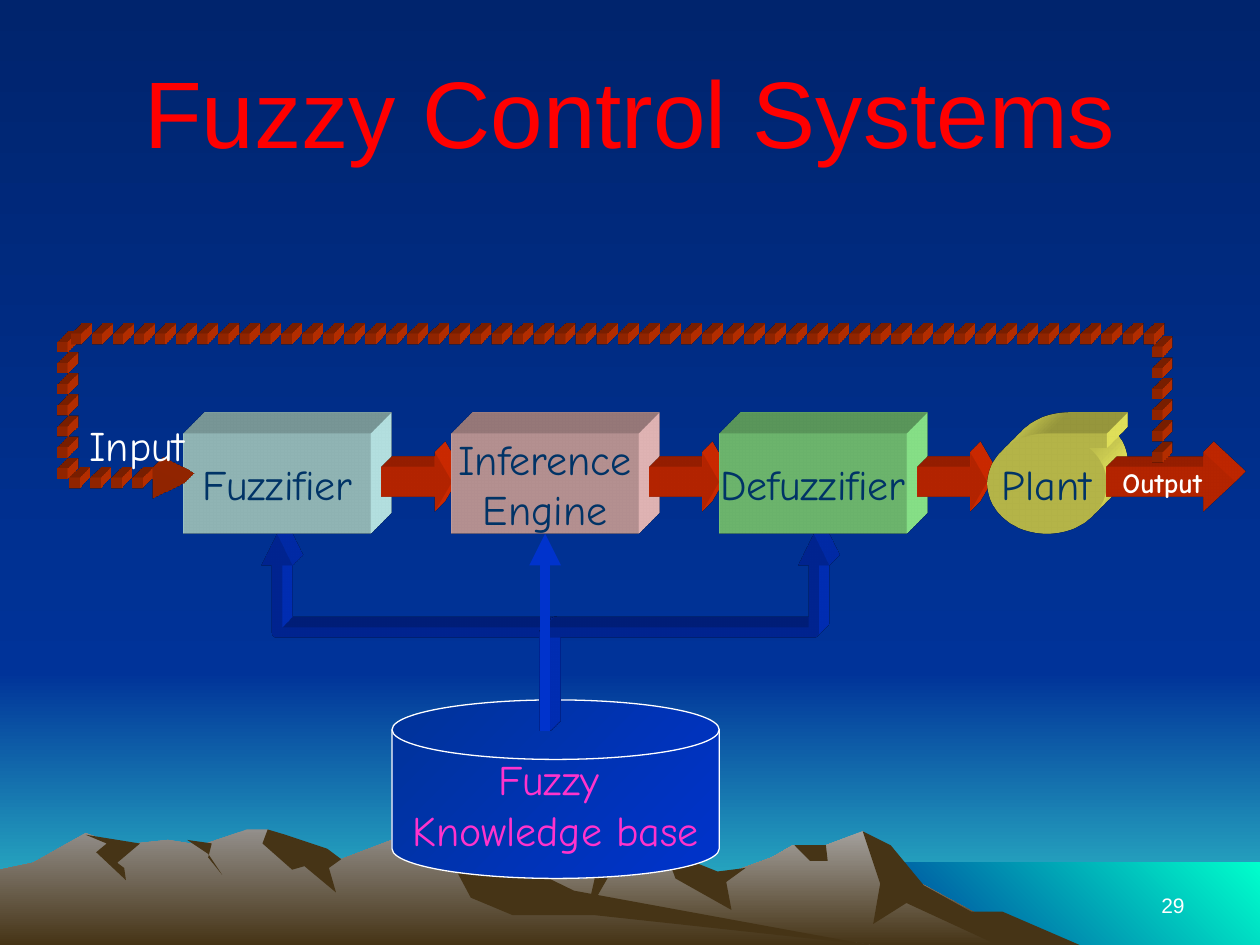
"""Build the fuzzy control systems slide."""
from dataclasses import dataclass
from typing import NamedTuple

from lxml.etree import SubElement
from pptx import Presentation
from pptx.dml.color import RGBColor
from pptx.enum.dml import MSO_LINE
from pptx.enum.shapes import MSO_CONNECTOR, MSO_SHAPE
from pptx.enum.text import MSO_ANCHOR, PP_ALIGN
from pptx.oxml import parse_xml
from pptx.oxml.ns import nsdecls, qn
from pptx.util import Pt


@dataclass(frozen=True)
class Theme:
    sans: str = "Arial"
    hand: str = "Comic Neue"
    night: str = "00246D"
    blue: str = "003399"
    royal: str = "0033CC"
    sea: str = "33CCCC"
    aqua: str = "00FFCC"
    rock: str = "463416"
    stone: str = "938F8B"
    mist: str = "A5A29F"
    ink: str = "003366"
    white: str = "FFFFFF"
    red: str = "FF0000"
    flame: str = "FF3300"
    brick: str = "CC3300"
    pink: str = "FF33CC"
    ice: str = "CCFFFF"
    rose: str = "FFCCCC"
    mint: str = "99FF99"
    lemon: str = "FFFF66"
    title: int = 54
    label: int = 24
    small: int = 16
    page: int = 12


class Box(NamedTuple):
    left: float
    top: float
    width: float
    height: float


class Blend(NamedTuple):
    start: str
    end: str
    angle: int = 270


class Style(NamedTuple):
    size: int
    color: str
    font: str = "Comic Neue"
    bold: bool = False
    align: PP_ALIGN = PP_ALIGN.CENTER
    anchor: MSO_ANCHOR = MSO_ANCHOR.MIDDLE
    wrap: bool = False


class Stage(NamedTuple):
    lines: tuple
    color: str


class Range(NamedTuple):
    color: str
    skyline: tuple
    shadows: tuple


class Bend(NamedTuple):
    box: Box
    turn: int
    flip: str
    color: str
    bends: tuple


THEME = Theme()
PAGE_WIDE, PAGE_HIGH, HORIZON, SHORE = 720, 540, 384, 493
LEFT, TOP, PITCH, WIDE, HIGH = 105, 248, 153, 107, 57
BOTTOM = TOP + HIGH
ARROW_TOP, ARROW_HIGH, ARROW_GAP = 258.5, 34, 6
DEEP, SHALLOW = Pt(34), Pt(17)
STEM, SOURCE = LEFT + PITCH + WIDE / 2, 417.5
STAGES = (
    Stage(("Fuzzifier",), THEME.ice),
    Stage(("Inference", "Engine"), THEME.rose),
    Stage(("Defuzzifier",), THEME.mint),
)
EAST = Range(
    THEME.mist,
    ((186, 540), (235, 510), (284, 493), (335, 474), (350, 484), (379, 484), (386, 497),
     (408, 502), (441, 490), (453, 483), (472, 483), (493, 475), (521, 502), (591, 540)),
    (((493, 475), (503, 505), (499, 528), (518, 516), (570, 540), (617, 540), (573, 521), (555, 521), (528, 506), (509, 483)),
     ((339, 474), (341, 497), (335, 523), (358, 483)),
     ((380, 486), (386, 502), (418, 520), (415, 504), (426, 496), (410, 498)),
     ((454, 483), (463, 492), (473, 492), (472, 483))))
WEST = Range(
    THEME.stone,
    ((0, 497), (19, 493), (49, 476), (68, 483), (96, 480), (115, 483), (141, 474), (153, 474),
     (170, 490), (187, 487), (195, 491), (229, 478), (255, 479), (311, 513), (497, 540)),
    (((153, 474), (150, 482), (167, 497), (174, 495), (192, 510), (188, 496), (195, 491), (187, 485), (163, 477)),
     ((244, 479), (243, 495), (261, 498), (269, 513), (293, 523), (340, 523), (497, 540), (328, 509), (289, 490)),
     ((107, 480), (119, 488), (127, 500), (119, 490), (121, 482)),
     ((49, 477), (61, 482), (55, 487), (72, 503), (71, 496), (67, 493), (80, 482))))


def tint(fill, paint) -> None:
    """Apply a plain colour or a two-stop gradient."""
    if isinstance(paint, Blend):
        fill.gradient()
        fill.gradient_angle = paint.angle
        for stop, color in zip(fill.gradient_stops, (paint.start, paint.end)):
            stop.color.rgb = RGBColor.from_string(color)
    else:
        fill.solid()
        fill.fore_color.rgb = RGBColor.from_string(paint)


def finish(shape, paint) -> None:
    """Fill a shape and remove its shadow and outline."""
    shape.shadow.inherit = False
    tint(shape.fill, paint)
    shape.line.fill.background()


def extrude(shape, color: str, depth: int) -> None:
    """Extrude a shape towards the upper right."""
    props = shape._element.spPr
    props.append(parse_xml(
        f'<a:scene3d {nsdecls("a")}><a:camera prst="legacyObliqueTopRight"/>'
        '<a:lightRig rig="legacyFlat3" dir="b"/></a:scene3d>'))
    props.append(parse_xml(
        f'<a:sp3d {nsdecls("a")} extrusionH="{depth}" prstMaterial="legacyMatte">'
        f'<a:extrusionClr><a:srgbClr val="{color}"/></a:extrusionClr></a:sp3d>'))


def write(shape, lines: tuple, style: Style) -> None:
    """Set styled lines of text in a shape."""
    frame = shape.text_frame
    frame.word_wrap = style.wrap
    frame.vertical_anchor = style.anchor
    for row, line in enumerate(lines):
        para = frame.add_paragraph() if row else frame.paragraphs[0]
        para.alignment = style.align
        run = para.add_run()
        run.text = line
        run.font.name = style.font
        run.font.size = Pt(style.size)
        run.font.bold = style.bold
        run.font.color.rgb = RGBColor.from_string(style.color)


def note(slide, box: Box, line: str, style: Style) -> None:
    """Add a text box."""
    write(slide.shapes.add_textbox(*map(Pt, box)), (line,), style)


def block(slide, kind: MSO_SHAPE, box: Box, paint, depth: int = 0):
    """Add a filled preset shape, extruded when it has depth."""
    shape = slide.shapes.add_shape(kind, *map(Pt, box))
    finish(shape, paint)
    if depth:
        extrude(shape, paint, depth)
    return shape


def arrow(slide, left: float, width: float, head: float):
    """Add a block arrow on the signal row."""
    box = Box(left, ARROW_TOP, width, ARROW_HIGH)
    shape = block(slide, MSO_SHAPE.RIGHT_ARROW, box, THEME.flame, SHALLOW)
    shape.adjustments[1] = head
    return shape


def wire(slide, kind: MSO_CONNECTOR, ends: tuple, color: str, dash=None):
    """Add a thick raised connector with an arrowhead."""
    line = slide.shapes.add_connector(kind, *map(Pt, ends))
    line.line.width = Pt(6)
    line.line.color.rgb = RGBColor.from_string(color)
    if dash:
        line.line.dash_style = dash
    SubElement(line.line._get_or_add_ln(), qn("a:tailEnd"), type="triangle")
    SubElement(line._element.spPr, qn("a:effectLst"))
    extrude(line, color, SHALLOW)
    return line


def elbow(slide, bend: Bend, dash=None) -> None:
    """Add a turned elbow connector."""
    left, top, width, height = bend.box
    xs, ys = (left, left + width), (top, top + height)
    xs = xs[::-1] if "h" in bend.flip else xs
    ys = ys[::-1] if "v" in bend.flip else ys
    line = wire(slide, MSO_CONNECTOR.ELBOW, (xs[0], ys[0], xs[1], ys[1]), bend.color, dash)
    props = line._element.spPr
    props.find(qn("a:xfrm")).set("rot", str(bend.turn * 60000))
    shape = props.find(qn("a:prstGeom"))
    shape.set("prst", f"bentConnector{len(bend.bends) + 2}")
    guides = shape.find(qn("a:avLst"))
    for rank, share in enumerate(bend.bends, 1):
        SubElement(guides, qn("a:gd"), name=f"adj{rank}", fmla=f"val {round(share * 100000)}")


def branch(slide, side: int) -> None:
    """Lead from the knowledge base to the stage on one side of the stem."""
    rise = SOURCE - BOTTOM
    box = Box(STEM + side * PITCH / 2 - rise / 2, (SOURCE + BOTTOM - PITCH) / 2, rise, PITCH)
    turn, flip = (90, "h") if side < 0 else (270, "")
    elbow(slide, Bend(box, turn, flip, THEME.royal, (0.5,)))


def facet(slide, dots: tuple, paint) -> None:
    """Draw a closed outline."""
    outline = slide.shapes.build_freeform(*dots[0], scale=Pt(1))
    outline.add_line_segments(dots[1:], close=True)
    finish(outline.convert_to_shape(), paint)


def mountains(slide, group: Range) -> None:
    """Close a skyline along the slide's foot and lay its shadows on it."""
    first, last = group.skyline[0], group.skyline[-1]
    foot = ((last[0], PAGE_HIGH), (first[0], PAGE_HIGH))
    facet(slide, group.skyline + foot, Blend(group.color, THEME.rock))
    for shadow in group.shadows:
        facet(slide, shadow, THEME.rock)


def scene(slide) -> None:
    """Paint the sky, the sea and the mountains."""
    sky = Blend(THEME.night, THEME.blue)
    tint(slide.background.fill, sky)
    for box, paint in (
        (Box(0, HORIZON, PAGE_WIDE, PAGE_HIGH - HORIZON), Blend(THEME.blue, THEME.sea)),
        (Box(0, 0, PAGE_WIDE, HORIZON), sky),
        (Box(492, SHORE, PAGE_WIDE - 492, PAGE_HIGH - SHORE), Blend(THEME.blue, THEME.aqua, 45)),
    ):
        block(slide, MSO_SHAPE.RECTANGLE, box, paint)
    for group in (EAST, WEST):
        mountains(slide, group)


def store(slide):
    """Draw the knowledge base and its wires, and return the middle one."""
    base = block(slide, MSO_SHAPE.FLOWCHART_MAGNETIC_DISK, Box(224, 400, 187, 102),
                 Blend(THEME.blue, THEME.royal, 315))
    base.line.color.rgb = RGBColor.from_string(THEME.white)
    base.line.width = Pt(0.75)
    write(base, ("Fuzzy ", "Knowledge base"), Style(THEME.label, THEME.pink))
    for side in (-1, 1):
        branch(slide, side)
    return wire(slide, MSO_CONNECTOR.STRAIGHT, (STEM, SOURCE, STEM, BOTTOM), THEME.royal)


def chain(slide, stem) -> None:
    """Draw the stages, the plant and the feedback loop."""
    ink = Style(THEME.label, THEME.ink)
    for rank, stage in enumerate(STAGES):
        left = LEFT + rank * PITCH
        shape = block(slide, MSO_SHAPE.RECTANGLE, Box(left, TOP, WIDE, HIGH), stage.color, DEEP)
        write(shape, stage.lines, ink)
        if rank == 1:
            stem.end_connect(shape, 2)
        arrow(slide, left + WIDE + ARROW_GAP, PITCH - WIDE - ARROW_GAP, 0.29)
    plant = block(slide, MSO_SHAPE.FLOWCHART_SEQUENTIAL_ACCESS_STORAGE,
                  Box(LEFT + len(STAGES) * PITCH, TOP, 68, HIGH), THEME.lemon, DEEP)
    plant._element.spPr.find(qn("a:xfrm")).set("flipV", "1")
    write(plant, ("Plant",), ink)
    plant.text_frame._txBody.bodyPr.set("rot", "10800000")
    write(arrow(slide, 632, 73.5, 0.54), ("Output",),
          Style(THEME.small, THEME.white, bold=True))
    loop = Bend(Box(377.5, -8, 11.5, 556), 270, "hv", THEME.brick, (-6.11, 1.125))
    elbow(slide, loop, MSO_LINE.ROUND_DOT)


def main() -> None:
    """Build and save the slide."""
    deck = Presentation()
    deck.slide_width, deck.slide_height = Pt(PAGE_WIDE), Pt(PAGE_HIGH)
    slide = deck.slides.add_slide(deck.slide_layouts[6])
    scene(slide)
    note(slide, Box(36, 18, 648, 90), "Fuzzy Control Systems",
         Style(THEME.title, THEME.red, THEME.sans, wrap=True))
    chain(slide, store(slide))
    note(slide, Box(44, 236, 78, 36), "Input",
         Style(THEME.label, THEME.white, align=PP_ALIGN.LEFT, anchor=MSO_ANCHOR.TOP))
    note(slide, Box(516, 492, 168, 36), "29",
         Style(THEME.page, THEME.white, THEME.sans, align=PP_ALIGN.RIGHT,
               anchor=MSO_ANCHOR.BOTTOM, wrap=True))
    deck.save("out.pptx")


if __name__ == "__main__":
    main()
